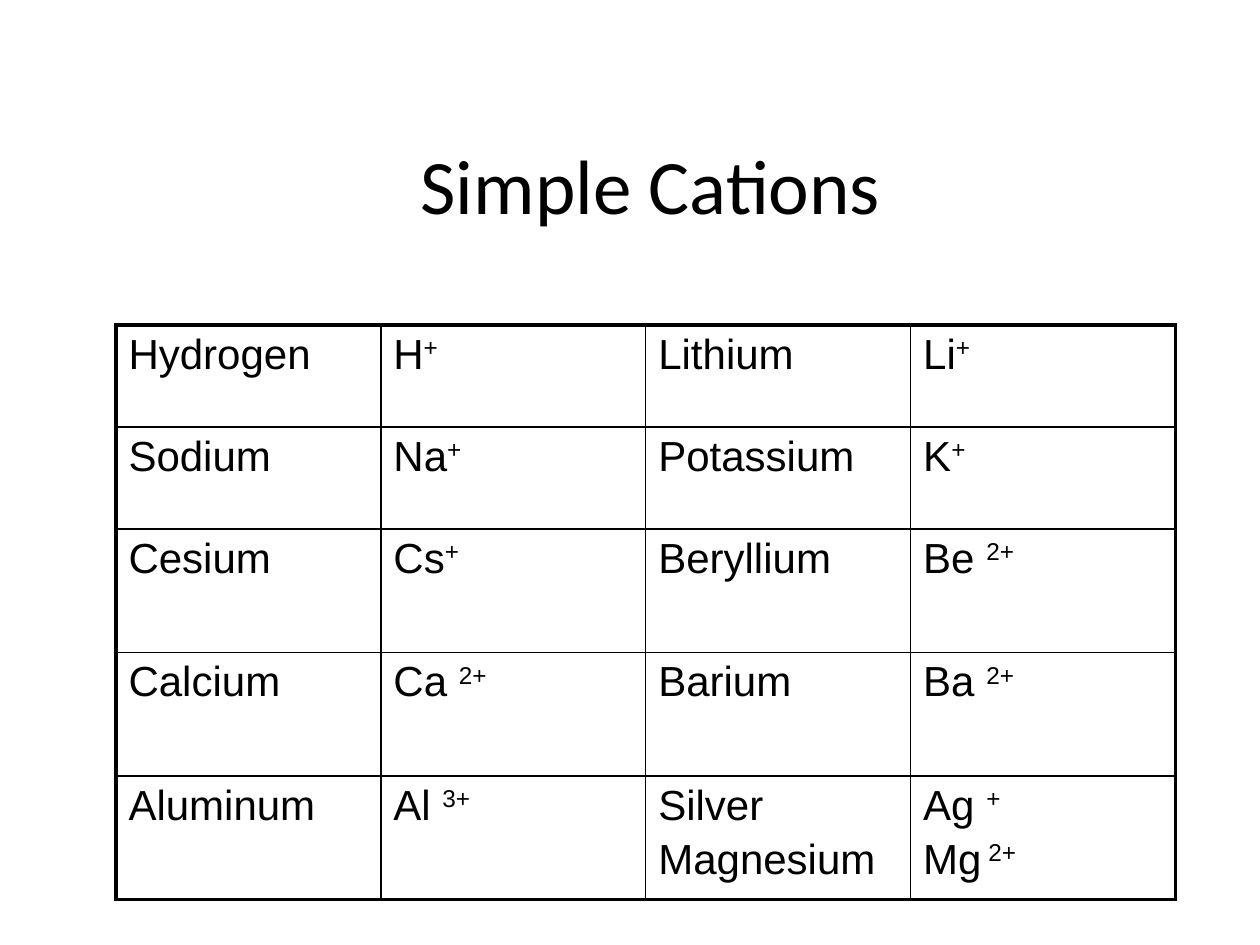
from lxml import etree
from pptx import Presentation
from pptx.dml.color import RGBColor
from pptx.enum.text import MSO_ANCHOR, PP_ALIGN
from pptx.oxml.ns import qn
from pptx.util import Inches, Pt

CENTER = PP_ALIGN.CENTER
MIDDLE = MSO_ANCHOR.MIDDLE
BLACK = "000000"
THIN, THICK = 1, 2.25


def style(span, name, size, color):
    for key, value in {"name": name, "size": Pt(size)}.items():
        setattr(span.font, key, value)
    span.font.color.rgb = RGBColor.from_string(color)


def border(cell, side, width, color):
    line = etree.SubElement(cell._tc.get_or_add_tcPr(), qn(f"a:{side}"), w=str(Pt(width)))
    fill = etree.SubElement(line, qn("a:solidFill"))
    etree.SubElement(fill, qn("a:srgbClr"), val=color)


cations = [
    [["Hydrogen"], ["H^+"], ["Lithium"], ["Li^+"]],
    [["Sodium"], ["Na^+"], ["Potassium"], ["K^+"]],
    [["Cesium"], ["Cs^+"], ["Beryllium"], ["Be ^2+"]],
    [["Calcium"], ["Ca ^2+"], ["Barium"], ["Ba ^2+"]],
    [["Aluminum"], ["Al ^3+"], ["Silver", "Magnesium"], ["Ag ^+", "Mg^ 2+"]],
]
row_heights = [0.81, 0.81, 0.98, 0.98, 0.98]
row_count, column_count = len(cations), len(cations[0])

deck = Presentation()
deck.slide_width, deck.slide_height = Inches(10), Inches(7.5)
page = deck.slides.add_slide(deck.slide_layouts[6])

title = page.shapes.add_textbox(Inches(0.83), Inches(0.83), Inches(8.67), Inches(1.25))
frame = title.text_frame
for key, value in {"word_wrap": True, "vertical_anchor": MIDDLE}.items():
    setattr(frame, key, value)
para = frame.paragraphs[0]
para.alignment = CENTER
span = para.add_run()
span.text = "Simple Cations"
style(span, "Calibri", 44, BLACK)

table = page.shapes.add_table(
    row_count, column_count, Inches(0.92), Inches(2.58), Inches(8.41), Inches(sum(row_heights))
).table
for key in ("first_row", "horz_banding"):
    setattr(table, key, False)

for row, (height, entries) in enumerate(zip(row_heights, cations)):
    table.rows[row].height = Inches(height)
    for column, lines in enumerate(entries):
        cell = table.cell(row, column)
        outer_edges = {
            "lnL": column == 0,
            "lnR": column == column_count - 1,
            "lnT": row == 0,
            "lnB": row == row_count - 1,
        }
        for side, is_outer in outer_edges.items():
            border(cell, side, THICK if is_outer else THIN, BLACK)
        cell.fill.background()
        for number, line in enumerate(lines):
            if number == 0:
                para = cell.text_frame.paragraphs[0]
            else:
                para = cell.text_frame.add_paragraph()
                para.space_before = Pt(4)
            for part, text in enumerate(line.split("^")):
                span = para.add_run()
                span.text = text
                style(span, "Arial", 24, BLACK)
                if part == 1:
                    span._r.get_or_add_rPr().set("baseline", "30000")

deck.save("out.pptx")
